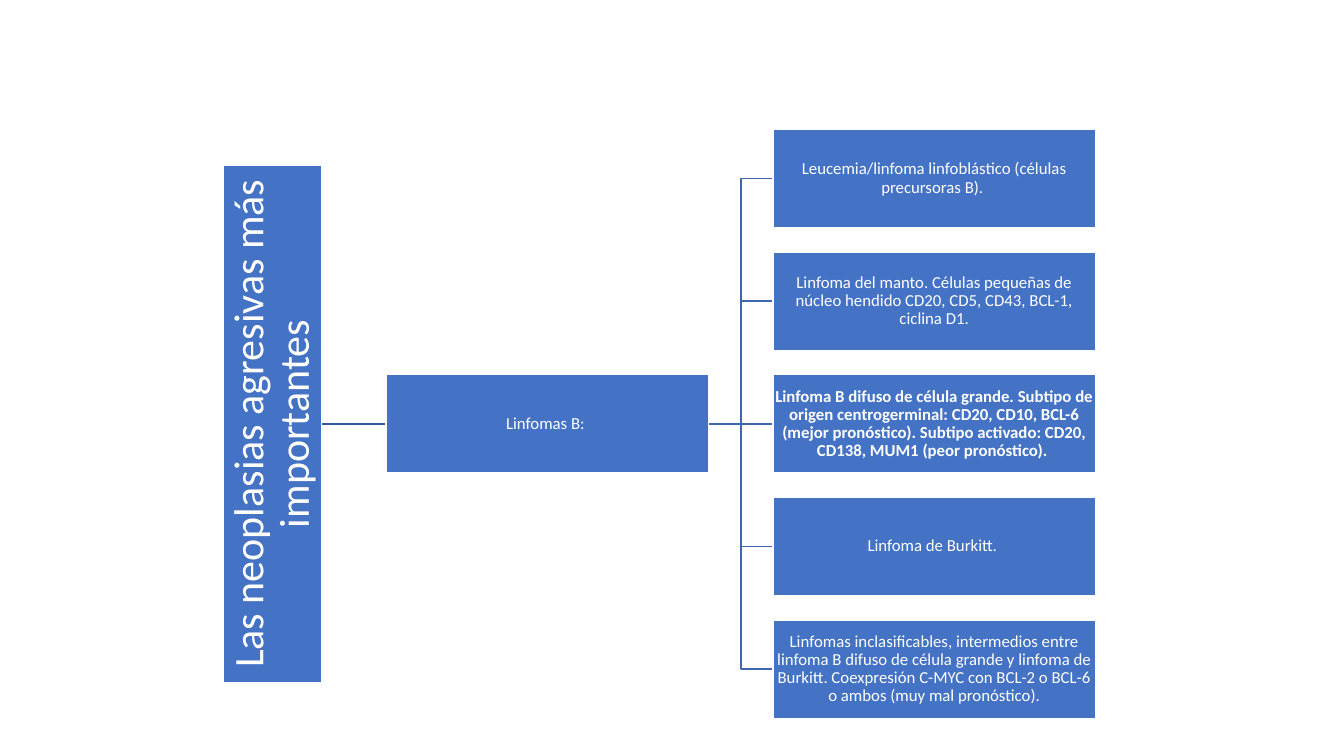
from lxml import etree
from pptx import Presentation
from pptx.dml.color import RGBColor
from pptx.enum.shapes import MSO_CONNECTOR, MSO_SHAPE
from pptx.enum.text import MSO_ANCHOR, PP_ALIGN
from pptx.oxml.ns import qn
from pptx.util import Cm, Pt

RECT = MSO_SHAPE.RECTANGLE
LINE, ELBOW = MSO_CONNECTOR.STRAIGHT, MSO_CONNECTOR.ELBOW
MIDDLE, CENTER = MSO_ANCHOR.MIDDLE, PP_ALIGN.CENTER

ROOT = "Las neoplasias agresivas más importantes"
BRANCH = "Linfomas B: "
LEAVES = [
    ("Leucemia/linfoma linfoblástico (células precursoras B). ", False),
    ("Linfoma del manto. Células pequeñas de núcleo hendido CD20, CD5, CD43, "
     "BCL-1, ciclina D1.", False),
    ("Linfoma B difuso de célula grande. Subtipo de origen centrogerminal: "
     "CD20, CD10, BCL-6 (mejor pronóstico). Subtipo activado: CD20, CD138, "
     "MUM1 (peor pronóstico). ", True),
    ("Linfoma de Burkitt. ", False),
    ("Linfomas inclasificables, intermedios entre linfoma B difuso de célula "
     "grande y linfoma de Burkitt. Coexpresión C-MYC con BCL-2 o BCL-6 o ambos "
     "(muy mal pronóstico).", False),
]

FONT = "Calibri"
BLUE, WHITE = "4472C4", "FFFFFF"
STEM, TWIG = "365B9D", "3E67B2"

WIDE, HIGH, LONG = 8.13, 2.48, 13.03
GAP, STEP = 1.62, 3.09
MID_Y = 10.68
BRANCH_X = 9.73
LEAF_X = BRANCH_X + WIDE + GAP
ROOT_X = BRANCH_X - GAP - HIGH / 2


def color(code):
    return RGBColor.from_string(code)


def add_box(slide, text, x, y, wide, size=12, bold=False, inset=0.03, turn=0):
    box = slide.shapes.add_shape(
        RECT, Cm(x - wide / 2), Cm(y - HIGH / 2), Cm(wide), Cm(HIGH))
    box.rotation = turn
    box.shadow.inherit = False
    box.fill.solid()
    box.fill.fore_color.rgb = color(BLUE)
    box.line.color.rgb = color(WHITE)
    box.line.width = Pt(1)
    frame = box.text_frame
    frame.word_wrap = True
    frame.vertical_anchor = MIDDLE
    frame.margin_left = frame.margin_right = Cm(inset)
    frame.margin_top = frame.margin_bottom = Cm(inset)
    para = frame.paragraphs[0]
    para.text = text
    para.alignment = CENTER
    para.line_spacing = 0.9
    para.font.name = FONT
    para.font.size = Pt(size)
    para.font.bold = bold
    para.font.color.rgb = color(WHITE)


def add_link(slide, x, y, code):
    kind = LINE if y == MID_Y else ELBOW
    link = slide.shapes.add_connector(
        kind, Cm(x), Cm(MID_Y), Cm(x + GAP), Cm(y))
    link.line.color.rgb = color(code)
    link.line.width = Pt(1)
    etree.SubElement(link._element.spPr, qn("a:effectLst"))


def main():
    deck = Presentation()
    deck.slide_width, deck.slide_height = Cm(33.87), Cm(19.05)
    slide = deck.slides.add_slide(deck.slide_layouts[6])

    rows = [MID_Y + (i - len(LEAVES) // 2) * STEP for i in range(len(LEAVES))]
    for y in rows:
        add_link(slide, LEAF_X - GAP, y, TWIG)
    add_link(slide, BRANCH_X - GAP, MID_Y, STEM)

    add_box(slide, ROOT, ROOT_X, MID_Y, LONG, size=30, inset=0.05, turn=270)
    add_box(slide, BRANCH, BRANCH_X + WIDE / 2, MID_Y, WIDE)
    for (text, bold), y in zip(LEAVES, rows):
        add_box(slide, text, LEAF_X + WIDE / 2, y, WIDE, bold=bold)

    deck.save("out.pptx")


if __name__ == "__main__":
    main()
